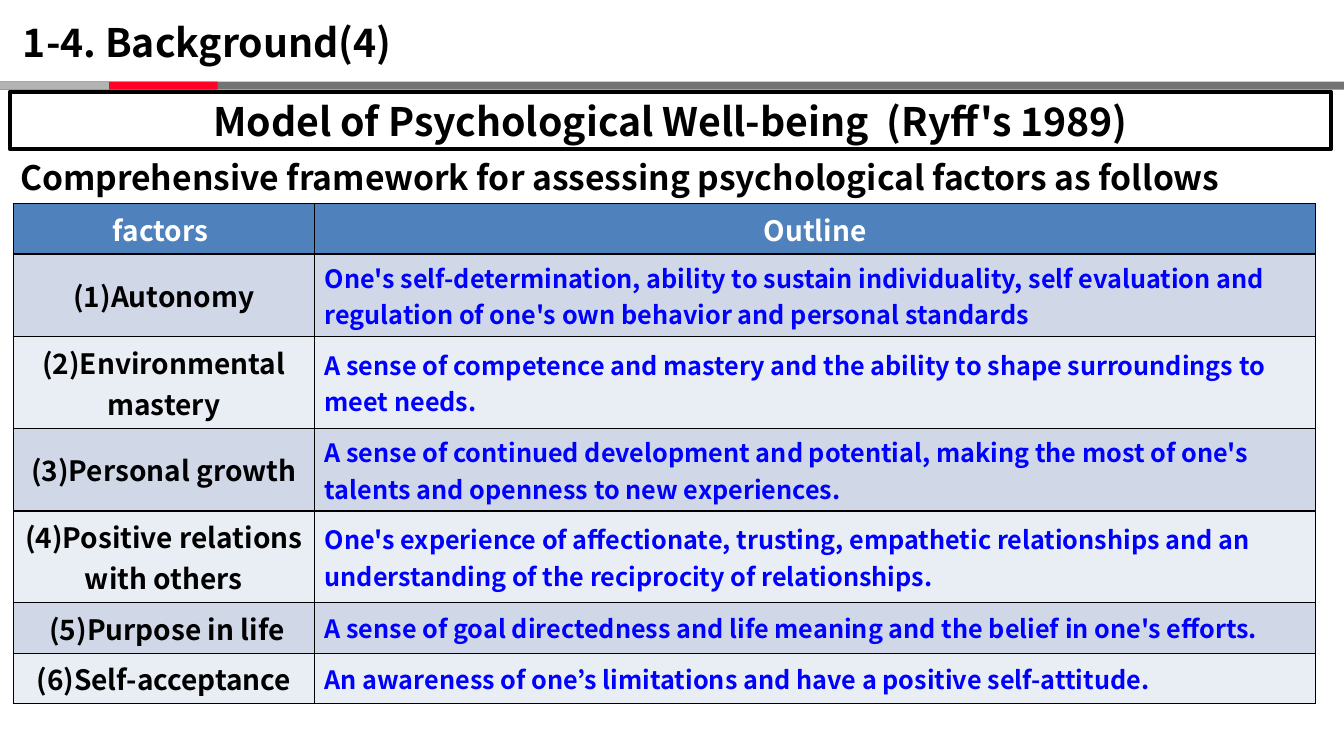
from pptx import Presentation
from pptx.dml.color import RGBColor
from pptx.enum.shapes import MSO_SHAPE
from pptx.enum.text import MSO_ANCHOR as ANCHOR, PP_ALIGN as ALIGN
from pptx.oxml import parse_xml
from pptx.oxml.ns import nsdecls
from pptx.util import Inches, Pt

FONT = "Noto Sans CJK JP"
BLACK, WHITE, BLUE = "000000", "FFFFFF", "0000FF"
HEADER_FILL, BAND_FILLS = "4F81BD", ("D0D8E8", "E9EDF4")
COLUMN_WIDTHS = (2.99, 9.93)
ROW_HEIGHTS = (0.5, 0.82, 0.91, 0.82, 0.91, 0.5, 0.5)
FACTORS = [
    ("(1)Autonomy",
     "One's self-determination, ability to sustain individuality, self evaluation and "
     "regulation of one's own behavior and personal standards"),
    ("(2)Environmental mastery",
     "A sense of competence and mastery and the ability to shape surroundings to meet needs."),
    ("(3)Personal growth",
     "A sense of continued development and potential, making the most of one's talents "
     "and openness to new experiences."),
    ("(4)Positive relations with others",
     "One's experience of affectionate, trusting, empathetic relationships and an "
     "understanding of the reciprocity of relationships."),
    (" (5)Purpose in life",
     "A sense of goal directedness and life meaning and the belief in one's efforts."),
    ("(6)Self-acceptance",
     "An awareness of one’s limitations and have a positive self-attitude."),
]


def rgb(value):
    return RGBColor.from_string(value)


def write(tf, text, size=20, color=BLACK, align=ALIGN.LEFT):
    p = tf.paragraphs[0]
    p.alignment = align
    r = p.add_run()
    r.text = text
    r.font.name, r.font.size, r.font.bold = FONT, Pt(size), True
    r.font.color.rgb = rgb(color)


def center_vertically(tf, wrap):
    tf.word_wrap = wrap
    tf.vertical_anchor = ANCHOR.MIDDLE
    tf.margin_top = tf.margin_bottom = 0


def add_rect(s, left, top, width, height, fill=None, line=None):
    sp = s.shapes.add_shape(MSO_SHAPE.RECTANGLE, Inches(left), Inches(top),
                            Inches(width), Inches(height))
    sp.shadow.inherit = False
    if fill:
        sp.fill.solid()
        sp.fill.fore_color.rgb = rgb(fill)
    else:
        sp.fill.background()
    if line:
        sp.line.color.rgb = rgb(line)
        sp.line.width = Pt(3)
    else:
        sp.line.fill.background()
    return sp


def add_label(s, text, left, top, width, height, size):
    tf = s.shapes.add_textbox(Inches(left), Inches(top),
                              Inches(width), Inches(height)).text_frame
    center_vertically(tf, wrap=False)
    write(tf, text, size=size)


def add_borders(cell):
    tc_pr = cell._tc.get_or_add_tcPr()
    for i, side in enumerate(("lnL", "lnR", "lnT", "lnB")):
        tc_pr.insert(i, parse_xml(
            f'<a:{side} {nsdecls("a")} w="{Pt(1)}"><a:solidFill>'
            f'<a:srgbClr val="{BLACK}"/></a:solidFill></a:{side}>'))


def fill_cell(cell, text, fill, **text_format):
    cell.fill.solid()
    cell.fill.fore_color.rgb = rgb(fill)
    cell.vertical_anchor = ANCHOR.MIDDLE
    add_borders(cell)
    write(cell.text_frame, text, **text_format)


def add_factor_table(s, left, top):
    table = s.shapes.add_table(len(ROW_HEIGHTS), len(COLUMN_WIDTHS), Inches(left), Inches(top),
                               Inches(sum(COLUMN_WIDTHS)), Inches(sum(ROW_HEIGHTS))).table
    for column, width in zip(table.columns, COLUMN_WIDTHS):
        column.width = Inches(width)
    for row, height in zip(table.rows, ROW_HEIGHTS):
        row.height = Inches(height)
    for col, heading in enumerate(("factors ", "Outline")):
        fill_cell(table.cell(0, col), heading, HEADER_FILL, color=WHITE, align=ALIGN.CENTER)
    for i, (factor, outline) in enumerate(FACTORS):
        fill = BAND_FILLS[i % 2]
        fill_cell(table.cell(i + 1, 0), factor, fill, align=ALIGN.CENTER)
        fill_cell(table.cell(i + 1, 1), outline, fill, size=18, color=BLUE)


def main():
    prs = Presentation()
    prs.slide_width, prs.slide_height = Inches(13.33), Inches(7.5)
    s = prs.slides.add_slide(prs.slide_layouts[6])

    # Title and the three-coloured rule below it
    for width, color in ((13.33, "737373"), (2.16, "FF0026"), (1.08, "B3B3B3")):
        add_rect(s, 0, 0.81, width, 0.08, fill=color)
    add_label(s, "1-4. Background(4)", 0.13, 0.13, 4.46, 0.57, size=28)

    # Table of factors
    add_factor_table(s, 0.13, 2.02)

    # Framed model name and lead sentence
    banner = add_rect(s, 0.1, 0.91, 13.1, 0.57, line=BLACK)
    center_vertically(banner.text_frame, wrap=True)
    write(banner.text_frame, "Model of Psychological Well-being  (Ryff's 1989)",
          size=28, align=ALIGN.CENTER)
    add_label(s, "Comprehensive framework for assessing psychological factors as follows",
              0.1, 1.51, 13.25, 0.5, size=24)

    prs.save("out.pptx")


if __name__ == "__main__":
    main()
